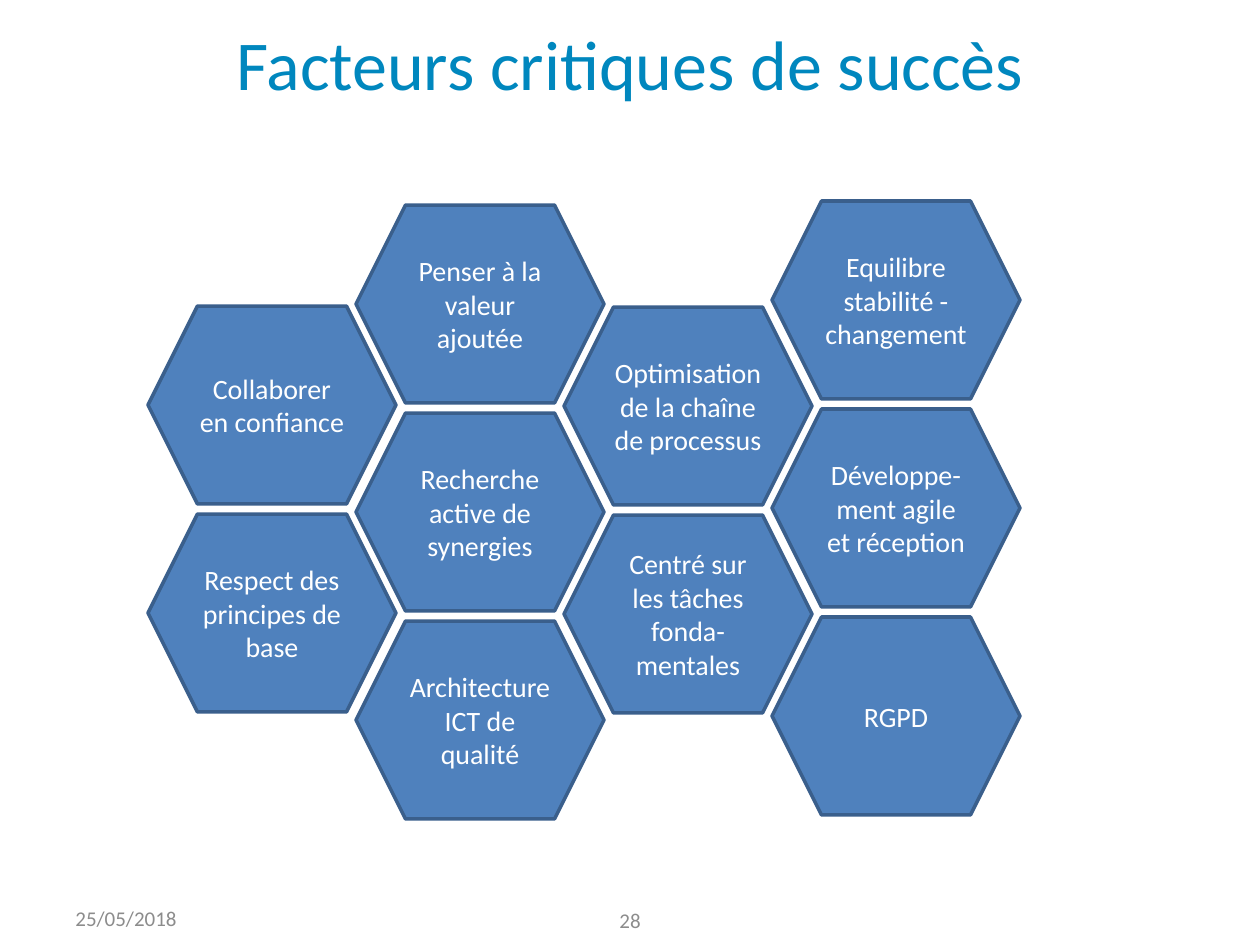
from pptx import Presentation
from pptx.dml.color import RGBColor
from pptx.enum.shapes import MSO_SHAPE
from pptx.enum.text import MSO_ANCHOR, PP_ALIGN
from pptx.util import Pt

HEXAGON = MSO_SHAPE.HEXAGON
MIDDLE = MSO_ANCHOR.MIDDLE
LEFT, CENTER = PP_ALIGN.LEFT, PP_ALIGN.CENTER

THEME = {
    "font": "Calibri",
    "title": (40, RGBColor(0x00, 0x87, 0xBE)),
    "label": (16, RGBColor(0xFF, 0xFF, 0xFF)),
    "footer": (12, RGBColor(0x8C, 0x8C, 0x8C)),
    "fill": RGBColor(0x4F, 0x81, 0xBD),
    "line": RGBColor(0x3A, 0x5F, 0x8C),
}
PX_PER_INCH = 126


def px(*lengths):
    """Turn pixel lengths into EMU."""
    return [round(length * 914400 / PX_PER_INCH) for length in lengths]


def write(shape, text, style, align):
    size, color = THEME[style]
    frame = shape.text_frame
    frame.word_wrap = True
    frame.vertical_anchor = MIDDLE
    frame.text = text
    para = frame.paragraphs[0]
    para.alignment = align
    font = para.runs[0].font
    font.name, font.size, font.color.rgb = THEME["font"], Pt(size), color


deck = Presentation()
deck.slide_width, deck.slide_height = px(1260, 945)
page = deck.slides.add_slide(deck.slide_layouts[6])

# Title and footer
for bounds, text, style, align in [
    ((63, 19, 1134, 87), "Facteurs critiques de succès", "title", CENTER),
    ((63, 891, 294, 54), "25/05/2018", "footer", LEFT),
    ((483, 895, 294, 50), "28", "footer", CENTER),
]:
    write(page.shapes.add_textbox(*px(*bounds)), text, style, align)

# Honeycomb: each column has its own top, the pitch is shared
HEX_WIDTH, HEX_HEIGHT = 248, 198
PITCH = 208
FIRST_LEFT = 148
columns = [
    (306, ["Collaborer en confiance", "Respect des principes de base"]),
    (205, ["Penser à la valeur ajoutée", "Recherche active de synergies",
           "Architecture ICT de qualité"]),
    (307, ["Optimisation de la chaîne de processus",
           "Centré sur les tâches fonda-mentales"]),
    (201, ["Equilibre stabilité - changement",
           "Développe-ment agile et réception", "RGPD"]),
]
for column, (top, labels) in enumerate(columns):
    for row, label in enumerate(labels):
        hexagon = page.shapes.add_shape(HEXAGON, *px(
            FIRST_LEFT + column * PITCH, top + row * PITCH,
            HEX_WIDTH, HEX_HEIGHT))
        hexagon.shadow.inherit = False
        hexagon.fill.solid()
        hexagon.fill.fore_color.rgb = THEME["fill"]
        hexagon.line.color.rgb = THEME["line"]
        hexagon.line.width = Pt(2)
        write(hexagon, label, "label", CENTER)

deck.save("out.pptx")
